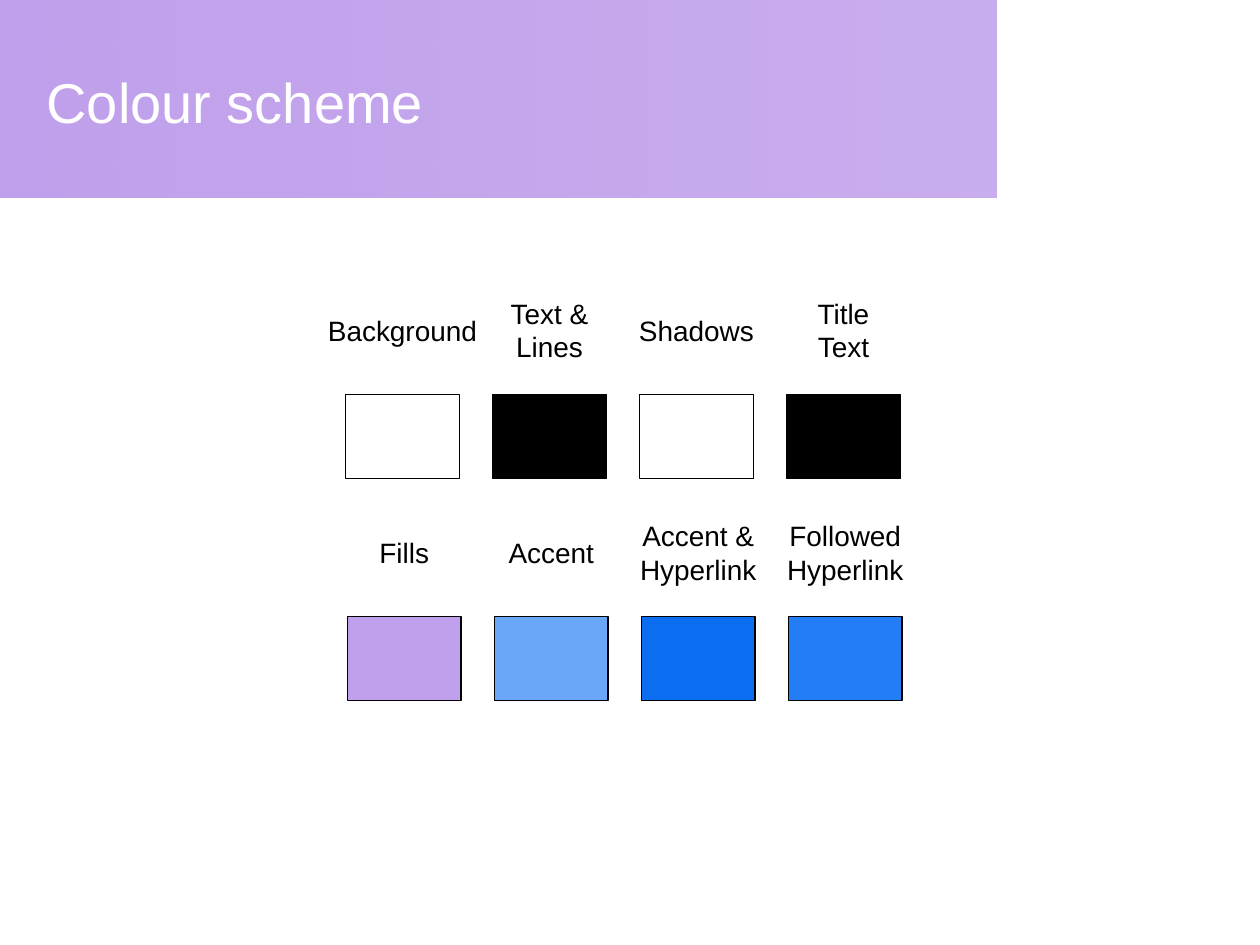
from lxml.etree import SubElement
from pptx import Presentation
from pptx.dml.color import RGBColor
from pptx.enum.shapes import MSO_SHAPE as Shape
from pptx.enum.text import MSO_ANCHOR as Anchor, MSO_AUTO_SIZE as AutoSize, PP_ALIGN as Align
from pptx.oxml.ns import qn
from pptx.util import Pt

WHITE = RGBColor(0xFF, 0xFF, 0xFF)
BLACK = RGBColor(0x00, 0x00, 0x00)
LILAC = RGBColor(0xC0, 0xA0, 0xEC)
SKY = RGBColor(0x6B, 0xA7, 0xF8)
BLUE = RGBColor(0x0B, 0x6D, 0xEF)
AZURE = RGBColor(0x23, 0x7D, 0xF5)

FONT = "Arial"
SWATCH_WIDTH, SWATCH_HEIGHT = 65, 48
COLUMN_PITCH = 84
LABEL_RISE = 37

ROWS = [
    (197.5, 225.5, [("Background", 100, WHITE), ("Text &\nLines", 60, BLACK),
                    ("Shadows", 80, WHITE), ("Title\vText", 45, BLACK)]),
    (198.5, 352.5, [("Fills", 43, LILAC), ("Accent", 63, SKY),
                    ("Accent &\nHyperlink", 81, BLUE), ("Followed\nHyperlink", 81, AZURE)]),
]


def add_rectangle(page, left, top, width, height):
    """Add a rectangle without a shadow."""
    box = page.shapes.add_shape(Shape.RECTANGLE, Pt(left), Pt(top), Pt(width), Pt(height))
    box.shadow.inherit = False
    return box


def add_banner(page):
    """Add the title band, which fades slightly towards the right."""
    banner = add_rectangle(page, 0, 0, 569.5, 113)
    banner.line.fill.background()
    banner.fill.gradient()
    banner.fill.gradient_angle = 0
    for stop in banner.fill.gradient_stops:
        stop.color.rgb = LILAC
    end_colour = list(banner._element.spPr.iter(qn("a:srgbClr")))[-1]
    SubElement(end_colour, qn("a:alpha"), val="85000")


def add_text(page, text, left, top, width, height, size, colour, align):
    """Add a vertically centred text box."""
    box = page.shapes.add_textbox(Pt(left), Pt(top), Pt(width), Pt(height))
    frame = box.text_frame
    frame.text = text
    frame.vertical_anchor = Anchor.MIDDLE
    for para in frame.paragraphs:
        para.alignment = align
        para.font.name = FONT
        para.font.size = Pt(size)
        para.font.color.rgb = colour
    return frame


def add_swatch(page, left, top, colour):
    """Add an outlined colour sample."""
    swatch = add_rectangle(page, left, top, SWATCH_WIDTH, SWATCH_HEIGHT)
    swatch.fill.solid()
    swatch.fill.fore_color.rgb = colour
    swatch.line.color.rgb = BLACK
    swatch.line.width = Pt(0.75)


def add_label(page, text, centre, middle, width):
    """Add a label centred on a point."""
    height = 7.2 + 19.4 * len(text.splitlines())
    frame = add_text(page, text, centre - width / 2, middle - height / 2,
                     width, height, 16, BLACK, Align.CENTER)
    frame.word_wrap = False
    frame.auto_size = AutoSize.SHAPE_TO_FIT_TEXT


def main():
    """Build the colour scheme slide."""
    deck = Presentation()
    deck.slide_width, deck.slide_height = Pt(720), Pt(540)
    page = deck.slides.add_slide(deck.slide_layouts[6])
    add_banner(page)
    title = add_text(page, "Colour scheme", 19.5, 21.5, 538.5, 73, 32, WHITE, Align.LEFT)
    title.word_wrap = True
    for row_left, top, samples in ROWS:
        for column, (text, width, colour) in enumerate(samples):
            left = row_left + column * COLUMN_PITCH
            add_swatch(page, left, top, colour)
            add_label(page, text, left + SWATCH_WIDTH / 2, top - LABEL_RISE, width)
    deck.save("out.pptx")


if __name__ == "__main__":
    main()
